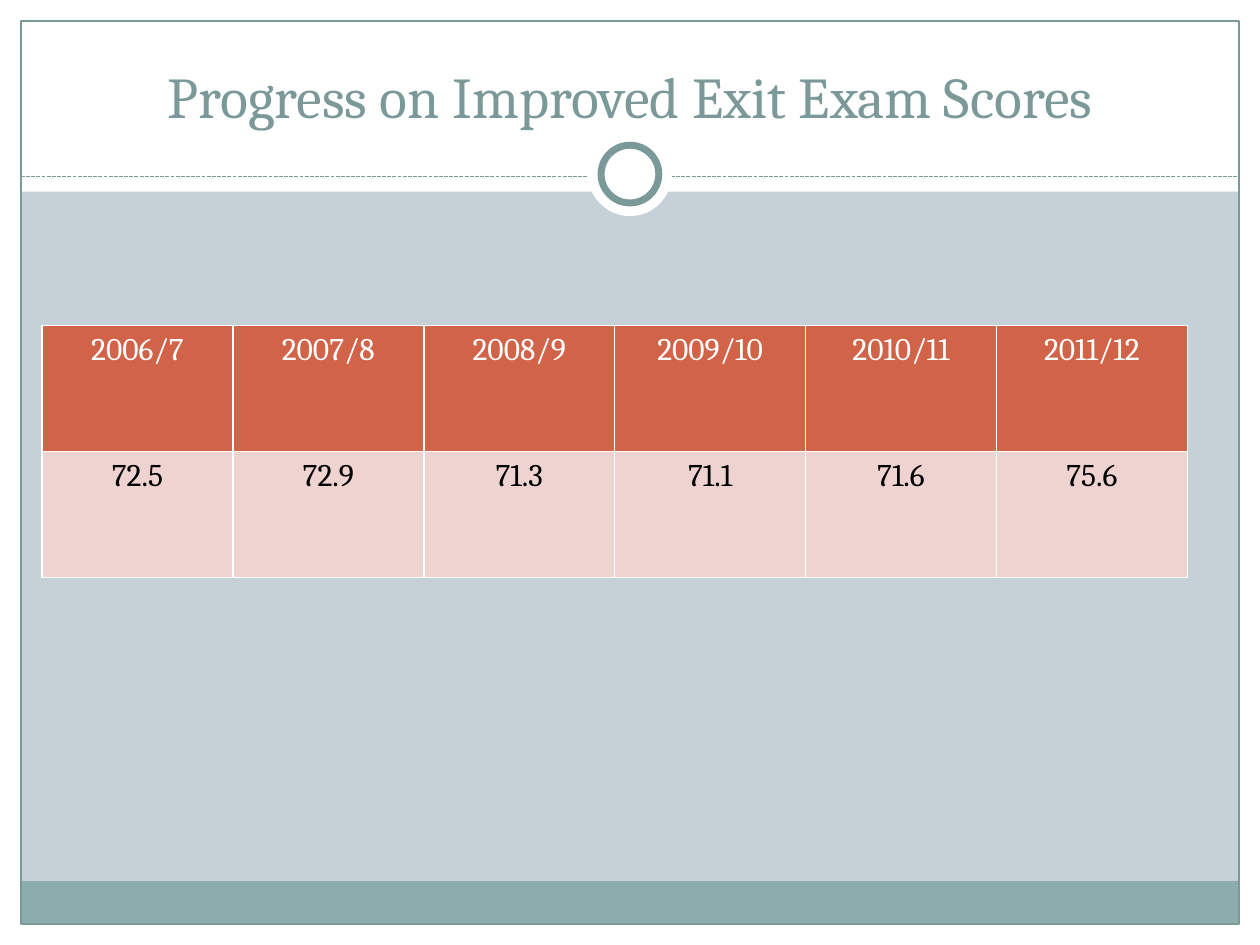
from lxml import etree
from pptx import Presentation
from pptx import util as u
from pptx.dml.color import RGBColor
from pptx.enum import dml, shapes, text
from pptx.oxml import ns

Pt = u.Pt
WHITE = RGBColor(0xFF, 0xFF, 0xFF)
BLACK = RGBColor(0, 0, 0)
BACKGROUND = RGBColor(0xC5, 0xD1, 0xD7)
TEAL = RGBColor(0x8C, 0xAD, 0xAE)
DARK_TEAL = RGBColor(0x7C, 0x99, 0x9A)
HEADER = RGBColor(0xD1, 0x63, 0x49)
BODY = RGBColor(0xEE, 0xD3, 0xD0)

WIDTH, HEIGHT, MARGIN = 720, 540, 12
RULE_TOP = 100.8
RECTANGLE = shapes.MSO_SHAPE.RECTANGLE
OVAL = shapes.MSO_SHAPE.OVAL


def write(paragraph, words, size, color):
    paragraph.alignment = text.PP_ALIGN.CENTER
    run = paragraph.add_run()
    run.text = words
    run.font.color.rgb = color
    font_format = {"name": "Cambria", "size": Pt(size), "bold": False}
    for name, value in font_format.items():
        setattr(run.font, name, value)


def add_border(cell, side, width):
    line = etree.SubElement(cell._tc.get_or_add_tcPr(), ns.qn(f"a:{side}"), w=str(Pt(width)))
    fill = etree.SubElement(line, ns.qn("a:solidFill"))
    etree.SubElement(fill, ns.qn("a:srgbClr"), val=str(WHITE))


presentation = Presentation()
presentation.slide_width, presentation.slide_height = Pt(WIDTH), Pt(HEIGHT)
slide = presentation.slides.add_slide(presentation.slide_layouts[6])
slide.background.fill.solid()
slide.background.fill.fore_color.rgb = BACKGROUND

rule = slide.shapes.add_connector(
    shapes.MSO_CONNECTOR.STRAIGHT, Pt(MARGIN), Pt(RULE_TOP), Pt(WIDTH - MARGIN), Pt(RULE_TOP))
rule.line.color.rgb = DARK_TEAL
rule.line.width = Pt(0.75)
rule.line.dash_style = dml.MSO_LINE.SQUARE_DOT
etree.SubElement(rule._element.spPr, ns.qn("a:effectLst"))

frame_parts = [
    (RECTANGLE, 0, HEIGHT - MARGIN, WIDTH, MARGIN, WHITE, None),
    (RECTANGLE, 0, 0, WIDTH, 109.5, WHITE, None),
    (RECTANGLE, 0, 0, MARGIN, HEIGHT, WHITE, None),
    (RECTANGLE, WIDTH - MARGIN, 0, MARGIN, HEIGHT, WHITE, None),
    (RECTANGLE, MARGIN, 503.5, WIDTH - 2 * MARGIN, 24.5, TEAL, None),
    (RECTANGLE, MARGIN, MARGIN, WIDTH - 2 * MARGIN, HEIGHT - 2 * MARGIN, None, 0.75),
    (OVAL, 336, 75.5, 48, 48, WHITE, None),
    (OVAL, 343.5, 83, 33, 33, WHITE, 4),
]
for kind, left, top, width, height, fill, line_width in frame_parts:
    shape = slide.shapes.add_shape(kind, Pt(left), Pt(top), Pt(width), Pt(height))
    shape.shadow.inherit = False
    if fill is None:
        shape.fill.background()
    else:
        shape.fill.solid()
        shape.fill.fore_color.rgb = fill
    if line_width is None:
        shape.line.fill.background()
    else:
        shape.line.color.rgb = DARK_TEAL
        shape.line.width = Pt(line_width)
    if kind == OVAL and line_width is None:
        shape._element.addprevious(rule._element)

title = slide.shapes.add_textbox(Pt(24), Pt(18), Pt(672), Pt(60))
title_format = {"word_wrap": True, "vertical_anchor": text.MSO_ANCHOR.BOTTOM}
for name, value in title_format.items():
    setattr(title.text_frame, name, value)
write(title.text_frame.paragraphs[0], "Progress on Improved Exit Exam Scores", 33, DARK_TEAL)

scores = {
    "2006/7": "72.5",
    "2007/8": "72.9",
    "2008/9": "71.3",
    "2009/10": "71.1",
    "2010/11": "71.6",
    "2011/12": "75.6",
}
table = slide.shapes.add_table(2, len(scores), Pt(24), Pt(186), Pt(654.6), Pt(144)).table
row_styles = [(scores.keys(), HEADER, WHITE), (scores.values(), BODY, BLACK)]
for row, (words, fill, color) in zip(table.rows, row_styles):
    for cell, word in zip(row.cells, words):
        write(cell.text_frame.paragraphs[0], word, 18, color)
        for side in ("lnL", "lnR", "lnT", "lnB"):
            add_border(cell, side, 1)
        cell.fill.solid()
        cell.fill.fore_color.rgb = fill

presentation.save("out.pptx")
